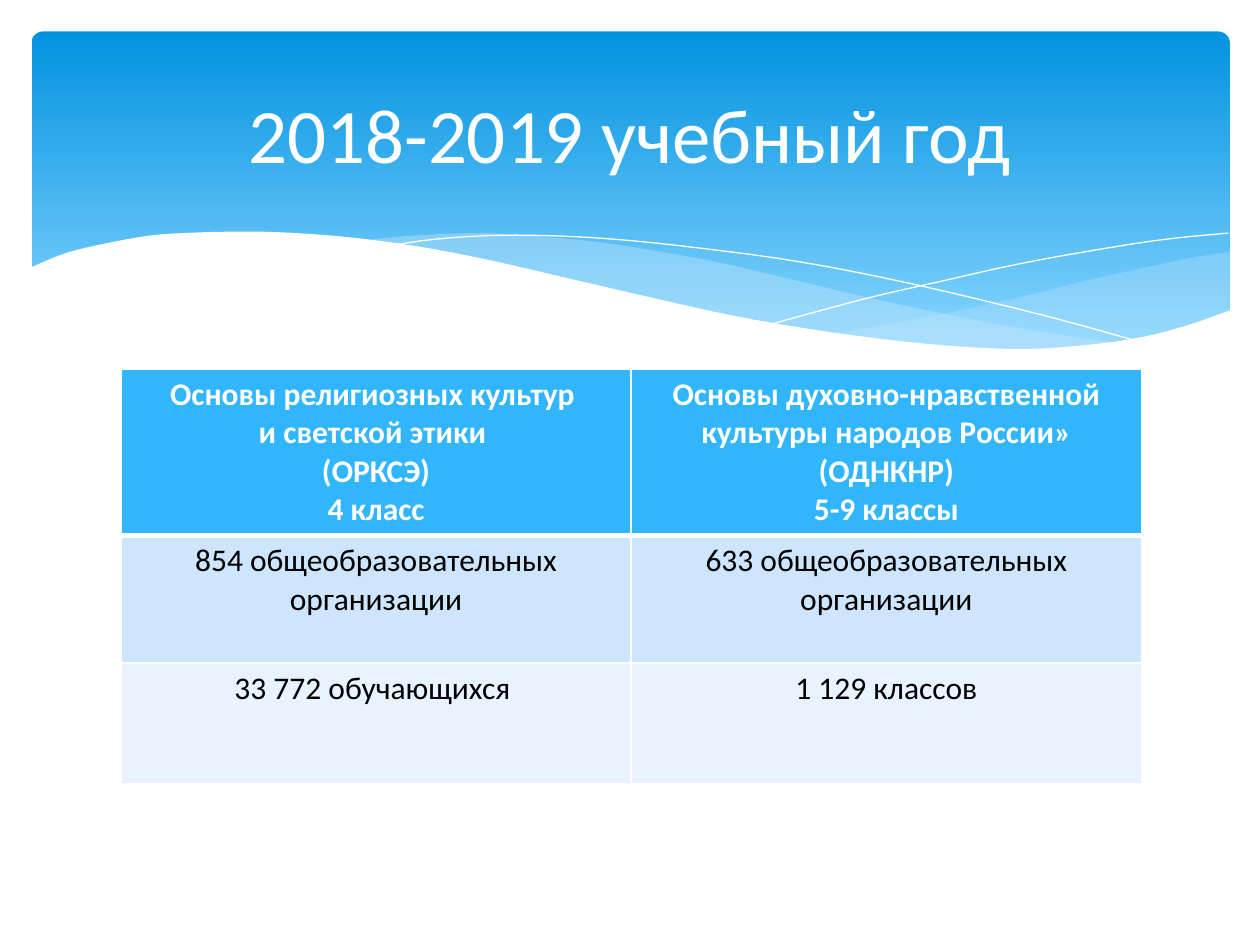
from dataclasses import dataclass

from lxml import etree
from pptx import Presentation
from pptx.dml.color import RGBColor
from pptx.enum.shapes import MSO_SHAPE
from pptx.enum.text import MSO_ANCHOR, PP_ALIGN
from pptx.oxml.ns import qn
from pptx.util import Inches, Pt

ROUNDED = MSO_SHAPE.ROUNDED_RECTANGLE
CENTER = PP_ALIGN.CENTER
MIDDLE, TOP = MSO_ANCHOR.MIDDLE, MSO_ANCHOR.TOP

Point = tuple[float, float]


@dataclass(frozen=True)
class Theme:
    font: str = "Calibri"
    title_size: int = 44
    table_size: int = 18
    white: str = "FFFFFF"
    black: str = "000000"
    band_top: str = "0293E0"
    band_bottom: str = "83D3FE"
    ripple: str = "C6E7FC"
    header: str = "31B6FD"


THEME = Theme()


@dataclass(frozen=True)
class Wave:
    """Smooth curves joined end to end; filled when opacity is given, else a thin line."""
    curves: list[list[Point]]
    color: str
    opacity: int | None = None


@dataclass(frozen=True)
class Row:
    height: float
    fill: str
    text_color: str
    bold: bool
    bottom_border: int
    cells: list[list[str]]


WAVES = [
    # Right ripple
    Wave([[(9.76, 2), (9.48, 2.04), (9.06, 2.13), (8.61, 2.23), (8.05, 2.37),
           (7.29, 2.53), (6.61, 2.65)],
          [(6.61, 2.65), (7.05, 2.71), (7.57, 2.76), (8.03, 2.78), (8.54, 2.76),
           (8.97, 2.7), (9.35, 2.62), (9.76, 2.47)]], THEME.ripple, 29),
    # Middle ripple
    Wave([[(8.93, 2.73), (8.37, 2.65), (7.75, 2.54), (7.06, 2.4), (6.29, 2.22),
           (5.69, 2.08), (5.14, 1.98), (4.65, 1.91), (4.2, 1.87), (3.8, 1.85),
           (3.28, 1.87), (2.86, 1.91)],
          [(2.86, 1.91), (3.42, 1.99), (4.04, 2.11), (4.49, 2.22), (5.3, 2.4),
           (6.01, 2.55), (6.65, 2.66), (7.22, 2.74), (7.73, 2.77), (8.18, 2.78),
           (8.57, 2.77), (8.93, 2.73)]], THEME.ripple, 40),
    # Falling and rising lines
    Wave([[(3.09, 1.95), (3.44, 1.9), (3.87, 1.87), (4.33, 1.87), (4.89, 1.9),
           (5.56, 1.97), (6.36, 2.08), (7.27, 2.26), (8.31, 2.51), (9.07, 2.72)]],
         THEME.white),
    Wave([[(6.13, 2.57), (6.53, 2.46), (6.95, 2.35), (7.48, 2.23), (8.06, 2.1),
           (8.66, 1.99), (9.24, 1.9), (9.75, 1.85)]], THEME.white),
    # White edge below the band
    Wave([[(9.77, 2.46), (9.4, 2.59), (8.99, 2.69), (8.5, 2.75), (8.09, 2.77),
           (7.61, 2.75), (7.08, 2.7), (6.48, 2.62), (5.79, 2.5), (5.03, 2.33),
           (4.47, 2.2), (3.91, 2.07), (3.4, 1.97), (2.92, 1.9), (2.5, 1.86),
           (2.11, 1.84), (1.77, 1.84), (1.46, 1.85), (1.19, 1.87), (0.85, 1.93),
           (0.52, 2.01), (0.23, 2.13)],
          [(0.23, 3.29), (9.77, 3.29)]], THEME.white, 100),
]

ROWS = [
    Row(1.31, THEME.header, THEME.white, True, 3, [
        ["Основы религиозных культур \nи светской этики ", "(ОРКСЭ)", "4 класс"],
        ["Основы духовно-нравственной культуры народов России» (ОДНКНР)", "5-9 классы"]]),
    Row(1.01, "CEE5FE", THEME.black, False, 1, [
        ["854 общеобразовательных организации"],
        ["633 общеобразовательных организации"]]),
    Row(0.96, "E8F3FF", THEME.black, False, 1, [
        ["33 772 обучающихся "], ["1 129 классов"]]),
]


def rgb(color: str) -> RGBColor:
    return RGBColor.from_string(color)


def smooth(points: list[Point], steps: int = 4) -> list[Point]:
    """Catmull-Rom curve through the points."""
    if len(points) < 3:
        return points
    padded = [points[0], *points, points[-1]]
    curve = [points[0]]
    for a, b, c, d in zip(padded, padded[1:], padded[2:], padded[3:]):
        for step in range(1, steps + 1):
            t = step / steps
            x, y = (0.5 * (2 * q + (r - p) * t + (2 * p - 5 * q + 4 * r - s) * t**2
                           + (3 * q - p - 3 * r + s) * t**3)
                    for p, q, r, s in zip(a, b, c, d))
            curve.append((x, y))
    return curve


def draw_band(slide) -> None:
    band = slide.shapes.add_shape(ROUNDED, Inches(0.25), Inches(0.25),
                                  Inches(9.51), Inches(2.7))
    band.adjustments[0] = 0.034
    band.shadow.inherit = False
    band.line.fill.background()
    band.fill.gradient()
    band.fill.gradient_angle = 270
    colors = ((0, THEME.band_top), (0.9, THEME.band_bottom))
    for stop, (position, color) in zip(band.fill.gradient_stops, colors):
        stop.position = position
        stop.color.rgb = rgb(color)


def draw_wave(slide, wave: Wave) -> None:
    start, *rest = [(Inches(x), Inches(y))
                    for curve in wave.curves for x, y in smooth(curve)]
    filled = wave.opacity is not None
    builder = slide.shapes.build_freeform(*start)
    builder.add_line_segments(rest, close=filled)
    outline = builder.convert_to_shape()
    outline.shadow.inherit = False
    if not filled:
        outline.fill.background()
        outline.line.color.rgb = rgb(wave.color)
        outline.line.width = Pt(0)
        return
    outline.line.fill.background()
    outline.fill.solid()
    outline.fill.fore_color.rgb = rgb(wave.color)
    if wave.opacity < 100:
        color = outline._element.spPr.find(qn("a:solidFill"))[0]
        etree.SubElement(color, qn("a:alpha"), val=str(wave.opacity * 1000))


def add_run(paragraph, text: str, size: int, color: str, bold: bool = False) -> None:
    run = paragraph.add_run()
    run.text = text
    run.font.name = THEME.font
    run.font.size = Pt(size)
    run.font.bold = bold
    run.font.color.rgb = rgb(color)


def set_borders(cell, widths: dict[str, int]) -> None:
    properties = cell._tc.get_or_add_tcPr()
    for side, width in widths.items():
        border = etree.SubElement(properties, qn(f"a:ln{side}"), w=str(Pt(width)))
        fill = etree.SubElement(border, qn("a:solidFill"))
        etree.SubElement(fill, qn("a:srgbClr"), val=THEME.white)


def fill_cell(cell, row: Row, paragraphs: list[str], top_border: int) -> None:
    set_borders(cell, {"L": 1, "R": 1, "T": top_border, "B": row.bottom_border})
    cell.fill.solid()
    cell.fill.fore_color.rgb = rgb(row.fill)
    cell.vertical_anchor = TOP
    for index, text in enumerate(paragraphs):
        frame = cell.text_frame
        paragraph = frame.add_paragraph() if index else frame.paragraphs[0]
        paragraph.alignment = CENTER
        for line_index, line in enumerate(text.split("\n")):
            if line_index:
                paragraph.add_line_break()
            add_run(paragraph, line, THEME.table_size, row.text_color, row.bold)


def draw_table(slide, rows: list[Row]) -> None:
    height = sum(row.height for row in rows)
    table = slide.shapes.add_table(len(rows), 2, Inches(0.96), Inches(2.93),
                                   Inches(8.1), Inches(height)).table
    table.horz_banding = False
    top_border = 1
    for row_index, row in enumerate(rows):
        table.rows[row_index].height = Inches(row.height)
        for column, paragraphs in enumerate(row.cells):
            fill_cell(table.cell(row_index, column), row, paragraphs, top_border)
        top_border = row.bottom_border


def place_title(slide, text: str) -> None:
    title = slide.shapes.title
    title.left, title.top = Inches(0.5), Inches(0.37)
    title.width, title.height = Inches(9), Inches(1.37)
    title.text_frame.vertical_anchor = MIDDLE
    paragraph = title.text_frame.paragraphs[0]
    paragraph.alignment = CENTER
    add_run(paragraph, text, THEME.title_size, THEME.white)
    # Bring the title in front of the band
    slide.shapes._spTree.append(title._element)


def main() -> None:
    presentation = Presentation()
    presentation.slide_width, presentation.slide_height = Inches(10), Inches(7.5)
    slide = presentation.slides.add_slide(presentation.slide_layouts[5])
    draw_band(slide)
    for wave in WAVES:
        draw_wave(slide, wave)
    draw_table(slide, ROWS)
    place_title(slide, "2018-2019 учебный год")
    presentation.save("out.pptx")


if __name__ == "__main__":
    main()
